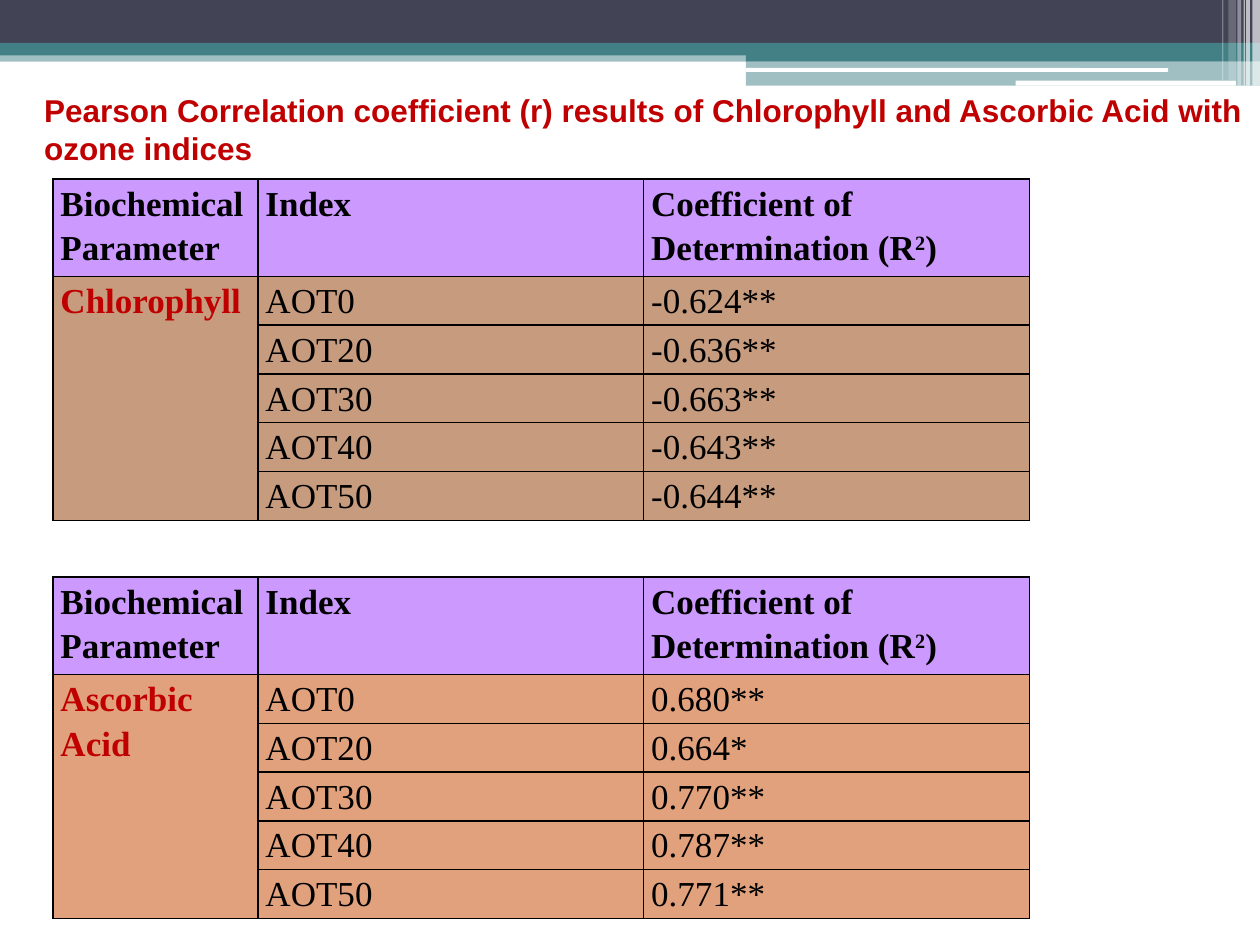
from lxml.etree import SubElement
from pptx import Presentation
from pptx.dml.color import RGBColor
from pptx.enum.shapes import MSO_SHAPE as Shape
from pptx.enum.text import MSO_ANCHOR as Anchor, MSO_AUTO_SIZE as AutoSize, PP_ALIGN as Align
from pptx.oxml.ns import qn
from pptx.util import Inches, Pt

SLIDE_WIDTH, SLIDE_HEIGHT = Inches(10), Inches(7.5)
COLUMN, ROW = SLIDE_WIDTH / 100, SLIDE_HEIGHT / 75
SERIF, SANS = "Times New Roman", "Arial"
BLACK, WHITE, RED = "000000", "FFFFFF", "C00000"
NAVY, TEAL, LILAC = "424456", "438086", "CC99FF"
INDICES = ["AOT0", "AOT20", "AOT30", "AOT40", "AOT50"]


def color(value):
    return RGBColor.from_string(value)


def place(left, top, width, height):
    return [round(left * COLUMN), round(top * ROW), round(width * COLUMN), round(height * ROW)]


def write(paragraph, text, size=20, font=SERIF, ink=BLACK, bold=False, baseline=0, spacing=1.15):
    paragraph.line_spacing = spacing
    paragraph.alignment = Align.LEFT
    run = paragraph.add_run()
    run.text = text
    run.font.size = Pt(size)
    run.font.name = font
    run.font.bold = bold
    run.font.color.rgb = color(ink)
    if baseline:
        run._r.get_or_add_rPr().set("baseline", str(baseline * 1000))


def add_bar(slide, box, fill, opacity=100, preset=Shape.RECTANGLE):
    shape = slide.shapes.add_shape(preset, *place(*box))
    shape.shadow.inherit = False
    shape.line.fill.background()
    shape.fill.solid()
    shape.fill.fore_color.rgb = color(fill)
    if opacity < 100:
        tint = shape.fill._xPr.find(qn("a:solidFill"))[0]
        SubElement(tint, qn("a:alpha"), val=str(opacity * 1000))


def add_banner(slide, left, top, width, height):
    right = left + width
    wing = 0.592 * width
    wing_left = right - 0.408 * width
    add_bar(slide, (left, top + 4, width, 0.9), TEAL, 50)
    add_bar(slide, (left, top, width, height / 2), NAVY)
    add_bar(slide, (left, top + height / 2, width, 1), TEAL)
    add_bar(slide, (wing_left, top + 3.9, right - wing_left, 0.95), TEAL)
    add_bar(slide, (wing_left, top + 4.8, right - wing_left, 2), TEAL, 50)
    for start, offset, length, thickness in [(wing, 5.4, 33.5, 0.3), (80.6, 6.4, 17.5, 0.4)]:
        add_bar(slide, (left + start, top + offset, length, thickness), WHITE,
                preset=Shape.ROUNDED_RECTANGLE)
    stripes = [(0.6, 0.6, 65, 1), (1.1, 0.3, 65, 1), (1.3, 0.1, 60, 1),
               (1.8, 0.3, 40, 1), (2.5, 0.6, 20, 0.94), (3, 0.1, 30, 0.94)]
    for inset, thickness, opacity, share in stripes:
        add_bar(slide, (right - inset, top, thickness, height * share), WHITE, opacity)


def add_title(slide, text, box):
    title = slide.shapes.title
    title.left, title.top, title.width, title.height = place(*box)
    frame = title.text_frame
    frame.word_wrap = True
    frame.auto_size = AutoSize.SHAPE_TO_FIT_TEXT
    frame.vertical_anchor = Anchor.TOP
    write(frame.paragraphs[0], text, size=18, font=SANS, ink=RED, bold=True, spacing=1)


def format_cell(cell, fill):
    cell.margin_left = cell.margin_right = Inches(0.06)
    cell.margin_top = cell.margin_bottom = 0
    properties = cell._tc.get_or_add_tcPr()
    for side in ("lnL", "lnR", "lnT", "lnB"):
        line = SubElement(properties, qn(f"a:{side}"), w=str(Pt(1)))
        solid = SubElement(line, qn("a:solidFill"))
        SubElement(solid, qn("a:srgbClr"), val=BLACK)
    cell.fill.solid()
    cell.fill.fore_color.rgb = color(fill)


def add_results(slide, parameter, values, fill, box):
    left, top, width, height = place(*box)
    row_count = len(values) + 1
    table = slide.shapes.add_table(row_count, 3, left, top, width, height).table
    table.first_row = table.horz_banding = False
    for column, share in zip(table.columns, (0.21, 0.395, 0.395)):
        column.width = round(width * share)
    for index, row in enumerate(table.rows):
        row.height = round(height * (1 / 7 if index else 2 / 7))
        for cell in row.cells:
            format_cell(cell, fill if index else LILAC)
    table.cell(1, 0).merge(table.cell(row_count - 1, 0))

    def paragraph_at(row, column):
        return table.cell(row, column).text_frame.paragraphs[0]

    headings = ["Biochemical Parameter", "Index", "Coefficient of Determination (R"]
    for column, heading in enumerate(headings):
        write(paragraph_at(0, column), heading, bold=True)
    write(paragraph_at(0, 2), "2", bold=True, baseline=30)
    write(paragraph_at(0, 2), ")", bold=True)
    write(paragraph_at(1, 0), parameter, ink=RED, bold=True)
    for row, pair in enumerate(zip(INDICES, values), start=1):
        for column, text in enumerate(pair, start=1):
            write(paragraph_at(row, column), text)


def main():
    presentation = Presentation()
    presentation.slide_width, presentation.slide_height = SLIDE_WIDTH, SLIDE_HEIGHT
    slide = presentation.slides.add_slide(presentation.slide_layouts[5])
    add_banner(slide, 0, 0, 100, 6.8)
    add_results(slide, "Chlorophyll",
                ["-0.624**", "-0.636**", "-0.663**", "-0.643**", "-0.644**"],
                "C69B7E", (4.2, 14.2, 77.5, 27.1))
    add_results(slide, "Ascorbic Acid",
                ["0.680**", "0.664*", "0.770**", "0.787**", "0.771**"],
                "E1A17C", (4.2, 45.8, 77.5, 27.1))
    add_title(slide, "Pearson Correlation coefficient (r) results of Chlorophyll and "
                     "Ascorbic Acid with ozone indices", (2.5, 6.7, 97.5, 7.1))
    presentation.save("out.pptx")


if __name__ == "__main__":
    main()
